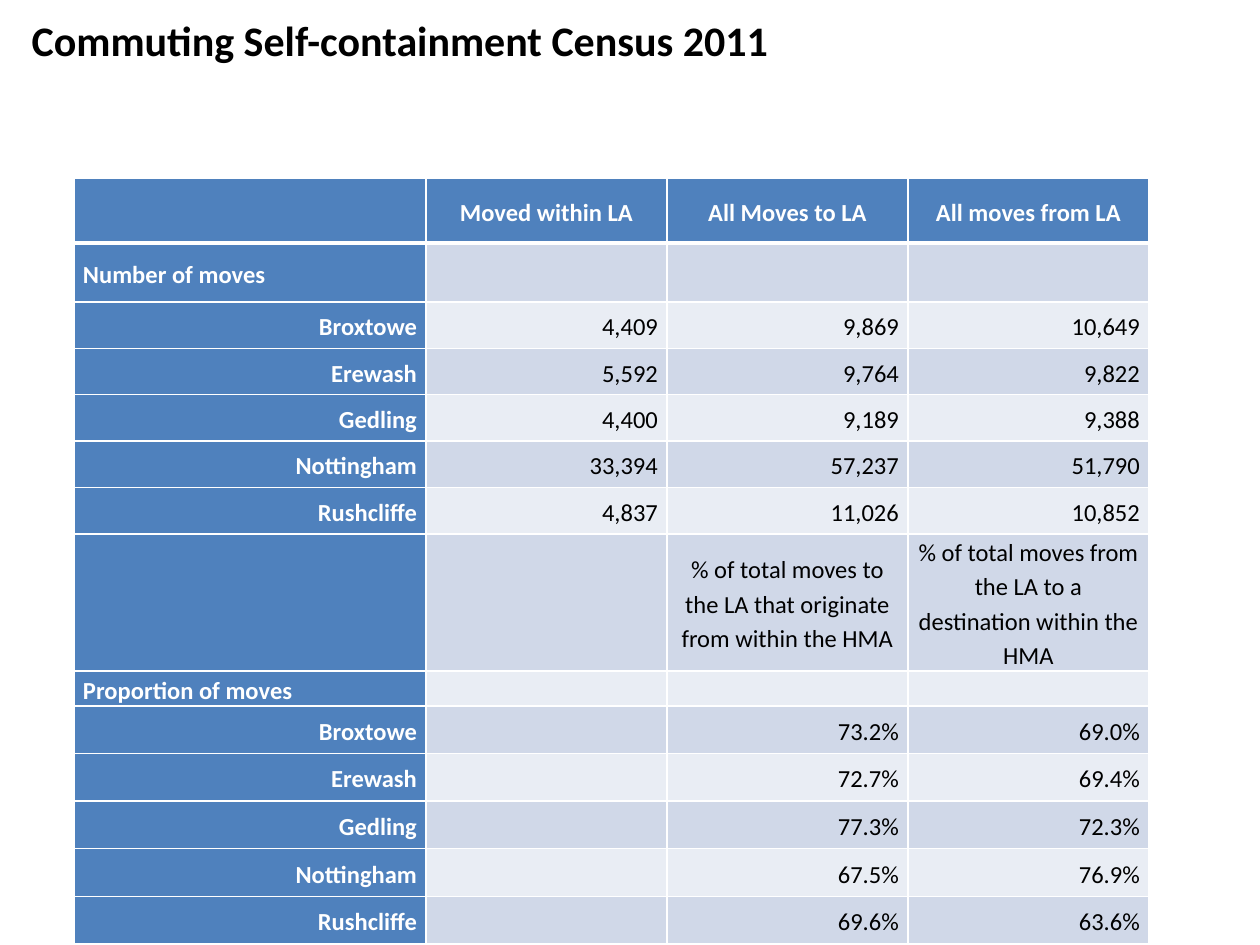
"""Build a slide with a table of commuting self-containment by local authority."""
from lxml.etree import SubElement
from pptx import Presentation
from pptx.dml.color import RGBColor
from pptx.enum.text import MSO_ANCHOR, PP_ALIGN
from pptx.oxml.ns import qn
from pptx.util import Pt

PX = 7257
TITLE = "Commuting Self-containment Census 2011"
TITLE_BOX = (19, 0, 1092, 79)
TABLE_LEFT, TABLE_TOP = 74, 178
COLUMN_WIDTHS = (352, 241, 241, 241)
WHITE, BLACK, BLUE = "FFFFFF", "000000", "4F81BD"
BANDS = ("E9EDF4", "D0D8E8")

HEADER = ("", "Moved within LA", "All Moves to LA", "All moves from LA")
NUMBERS = [
    ("Broxtowe", "4,409", "9,869", "10,649"),
    ("Erewash", "5,592", "9,764", "9,822"),
    ("Gedling", "4,400", "9,189", "9,388"),
    ("Nottingham", "33,394", "57,237", "51,790"),
    ("Rushcliffe", "4,837", "11,026", "10,852"),
]
EXPLANATION = (
    "", "",
    "% of total moves to the LA that originate from within the HMA",
    "% of total moves from the LA to a destination within the HMA",
)
SHARES = [
    ("Broxtowe", "", "73.2%", "69.0%"),
    ("Erewash", "", "72.7%", "69.4%"),
    ("Gedling", "", "77.3%", "72.3%"),
    ("Nottingham", "", "67.5%", "76.9%"),
    ("Rushcliffe", "", "69.6%", "63.6%"),
]
LEFT, CENTER, RIGHT = PP_ALIGN.LEFT, PP_ALIGN.CENTER, PP_ALIGN.RIGHT
BLOCKS = [
    (65, CENTER, [HEADER]),
    (59, LEFT, [("Number of moves", "", "", "")]),
    (232, RIGHT, NUMBERS),
    (84, CENTER, [EXPLANATION]),
    (35, LEFT, [("Proportion of moves", "", "", "")]),
    (238, RIGHT, SHARES),
]


def color(value):
    return RGBColor.from_string(value)


def apply(target, values):
    for name, value in values.items():
        setattr(target, name, value)


def style_span(span, size, ink, bold):
    apply(span.font, {"name": "Calibri", "size": Pt(size), "bold": bold})
    span.font.color.rgb = color(ink)


def add_border(cell, edge, points):
    line = SubElement(cell._tc.get_or_add_tcPr(), qn(f"a:{edge}"), w=str(Pt(points)))
    fill = SubElement(line, qn("a:solidFill"))
    SubElement(fill, qn("a:srgbClr"), val=WHITE)


def fill_cell(cell, text, row, column, align):
    heading = row == 0 or column == 0
    thick = {(0, "lnB"), (1, "lnT")}
    for edge in ("lnL", "lnR", "lnT", "lnB"):
        add_border(cell, edge, 3 if (row, edge) in thick else 1)
    cell.fill.solid()
    cell.fill.fore_color.rgb = color(BLUE if heading else BANDS[row % 2])
    apply(cell, {
        "vertical_anchor": MSO_ANCHOR.MIDDLE,
        "margin_left": 9 * PX, "margin_right": 9 * PX,
        "margin_top": 0, "margin_bottom": 0,
    })
    para = cell.text_frame.paragraphs[0]
    if text:
        apply(para, {"alignment": align, "line_spacing": 1.15})
        span = para.add_run()
        span.text = text
        style_span(span, 14, WHITE if heading else BLACK, heading)
    else:
        SubElement(para._p, qn("a:endParaRPr"), sz="1400")


def add_title(page):
    box = page.shapes.title
    left, top, width, height = (length * PX for length in TITLE_BOX)
    apply(box, {"left": left, "top": top, "width": width, "height": height})
    apply(box.text_frame, {"word_wrap": True, "vertical_anchor": MSO_ANCHOR.MIDDLE})
    para = box.text_frame.paragraphs[0]
    para.alignment = LEFT
    span = para.add_run()
    span.text = TITLE
    style_span(span, 24, BLACK, True)


def add_moves_table(page):
    rows = [
        (height * PX // len(lines), align, line)
        for height, align, lines in BLOCKS
        for line in lines
    ]
    table = page.shapes.add_table(
        len(rows), len(COLUMN_WIDTHS), TABLE_LEFT * PX, TABLE_TOP * PX,
        sum(COLUMN_WIDTHS) * PX, sum(row[0] for row in rows),
    ).table
    for column, width in zip(table.columns, COLUMN_WIDTHS):
        column.width = width * PX
    for row, (height, align, line) in enumerate(rows):
        table.rows[row].height = height
        for column, text in enumerate(line):
            fill_cell(table.cell(row, column), text, row, column, align)


def main():
    deck = Presentation()
    apply(deck, {"slide_width": 1260 * PX, "slide_height": 945 * PX})
    page = deck.slides.add_slide(deck.slide_layouts[5])
    add_title(page)
    add_moves_table(page)
    deck.save("out.pptx")


if __name__ == "__main__":
    main()
